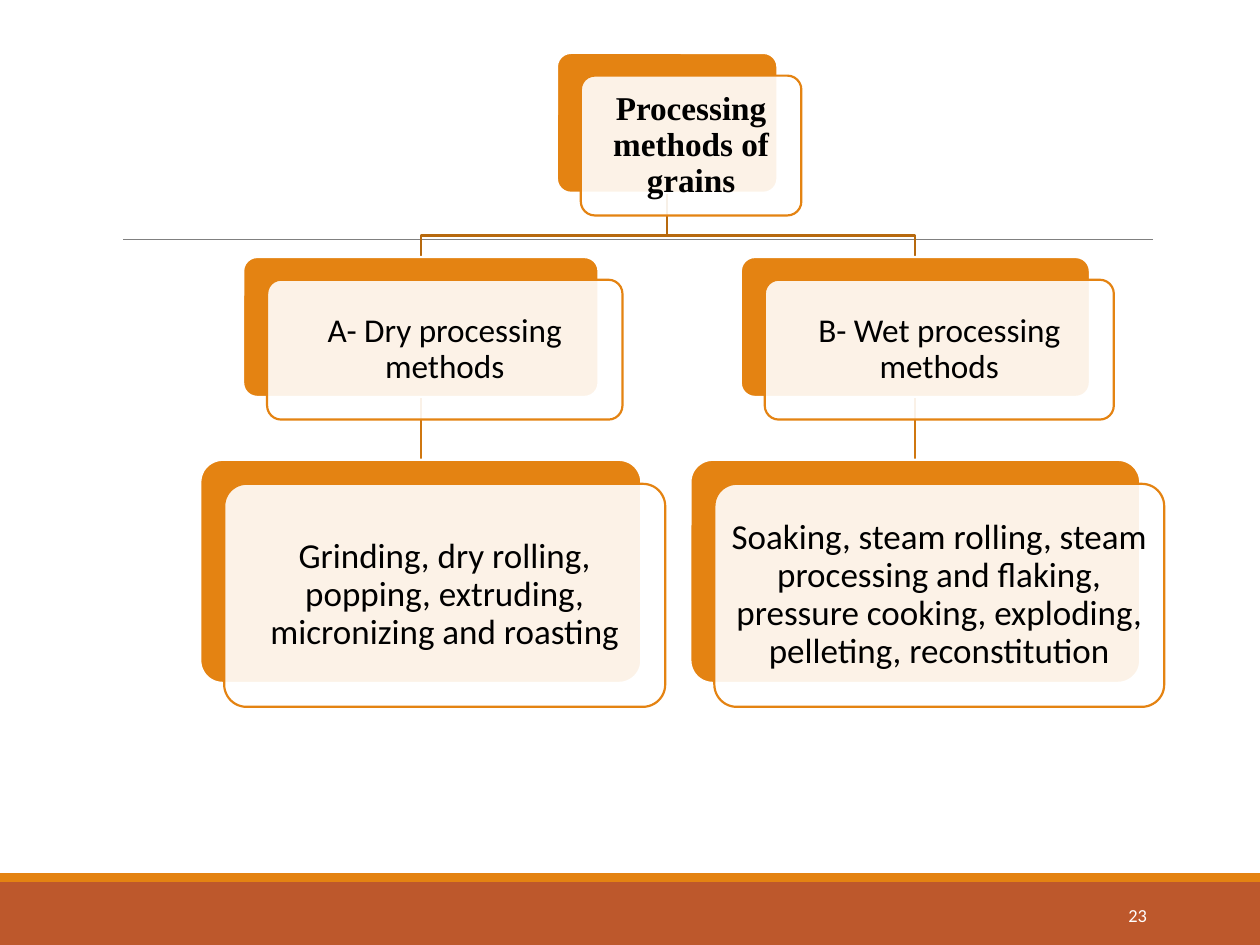
from dataclasses import dataclass

from lxml import etree
from pptx import Presentation
from pptx.dml.color import RGBColor
from pptx.enum.shapes import MSO_CONNECTOR, MSO_SHAPE
from pptx.enum.text import MSO_ANCHOR, PP_ALIGN
from pptx.oxml.ns import qn
from pptx.util import Inches, Pt

RECT, ROUND = MSO_SHAPE.RECTANGLE, MSO_SHAPE.ROUNDED_RECTANGLE
STRAIGHT = MSO_CONNECTOR.STRAIGHT
CENTER, RIGHT = PP_ALIGN.CENTER, PP_ALIGN.RIGHT
MIDDLE = MSO_ANCHOR.MIDDLE
ORANGE, RUST, WHITE, BLACK = "E48312", "BD582C", "FFFFFF", "000000"
TOP, BOTTOM = 0, 2
SHIFT = 0.19


@dataclass
class Card:
    text: str
    left: float
    top: float
    width: float
    height: float = 1.11
    size: float = 19
    font: str = "Calibri"
    bold: bool = False
    drop: float = 0.18

    @property
    def mid(self) -> float:
        return self.left + self.width / 2

    @property
    def base(self) -> float:
        return self.top + self.height


def color(code: str) -> RGBColor:
    return RGBColor.from_string(code)


def stroke(shape, code: str, width: float) -> None:
    shape.line.color.rgb = color(code)
    shape.line.width = Pt(width)


def box(slide, kind, left: float, top: float, width: float, height: float, fill: str):
    shape = slide.shapes.add_shape(kind, Inches(left), Inches(top), Inches(width), Inches(height))
    shape.shadow.inherit = False
    shape.fill.solid()
    shape.fill.fore_color.rgb = color(fill)
    shape.line.fill.background()
    return shape


def write(shape, text: str, *, size: float, font="Calibri", code=BLACK, bold=False,
          align=CENTER, inset=0.1, space=1.0) -> None:
    frame = shape.text_frame
    frame.word_wrap = True
    frame.vertical_anchor = MIDDLE
    frame.margin_left = frame.margin_right = Inches(inset)
    frame.margin_top = frame.margin_bottom = Inches(inset)
    para = frame.paragraphs[0]
    para.alignment = align
    para.line_spacing = space
    run = para.add_run()
    run.text = text
    run.font.size = Pt(size)
    run.font.name = font
    run.font.bold = bold
    run.font.color.rgb = color(code)


def line(slide, start: tuple, end: tuple, code: str, width: float):
    link = slide.shapes.add_connector(STRAIGHT, *map(Inches, start + end))
    stroke(link, code, width)
    etree.SubElement(link._element.spPr, qn("a:effectLst"))
    return link


def branch(slide, root: Card, child: Card) -> None:
    bend = child.top - 0.17
    points = [(root.mid, bend), (child.mid, bend), (child.mid, child.top)]
    path = slide.shapes.build_freeform(Inches(root.mid), Inches(root.base))
    path.add_line_segments([(Inches(x), Inches(y)) for x, y in points], close=False)
    shape = path.convert_to_shape()
    shape.shadow.inherit = False
    shape.fill.background()
    stroke(shape, "B7690E", 1.25)


def draw(slide, card: Card):
    back = box(slide, ROUND, card.left, card.top, card.width, card.height, ORANGE)
    front = box(slide, ROUND, card.left + SHIFT, card.top + card.drop,
                card.width, card.height, WHITE)
    for shape, edge in ((back, WHITE), (front, ORANGE)):
        shape.adjustments[0] = 0.1
        stroke(shape, edge, 1.25)
    tint = front.fill._xPr.find(qn("a:solidFill"))[0]
    etree.SubElement(tint, qn("a:alpha"), val="90000")
    write(front, card.text, size=card.size, font=card.font, bold=card.bold,
          inset=0.07, space=0.9)
    return back


def main() -> None:
    deck = Presentation()
    deck.slide_width, deck.slide_height = Inches(10), Inches(7.5)
    slide = deck.slides.add_slide(deck.slide_layouts[6])

    box(slide, RECT, 0, 7, 10, 0.5, RUST)
    box(slide, RECT, 0, 6.93, 10, 0.07, ORANGE)
    line(slide, (0.98, 1.9), (9.15, 1.9), "808080", 0.5)
    page = slide.shapes.add_textbox(Inches(8.12), Inches(7.06), Inches(1.08), Inches(0.4))
    write(page, "23", size=10.5, code=WHITE, align=RIGHT)

    root = Card("Processing methods of grains", 4.42, 0.42, 1.75,
                font="Times New Roman", bold=True)
    big = {"height": 1.77, "size": 20, "drop": 0.19}
    pairs = [
        (Card("A- Dry processing methods", 1.93, 2.04, 2.82),
         Card("Grinding, dry rolling, popping, extruding, micronizing and roasting",
              1.59, 3.65, 3.5, **big)),
        (Card("B- Wet processing methods", 5.88, 2.04, 2.77),
         Card("Soaking, steam rolling, steam processing and flaking, pressure cooking, "
              "exploding, pelleting, reconstitution", 5.48, 3.65, 3.57, **big)),
    ]

    links = []
    for group, leaf in pairs:
        links.append(line(slide, (group.mid, group.base), (leaf.mid, leaf.top), "CF7710", 1.25))
        branch(slide, root, group)
    draw(slide, root)
    for link, (group, leaf) in zip(links, pairs):
        link.begin_connect(draw(slide, group), BOTTOM)
        link.end_connect(draw(slide, leaf), TOP)

    deck.save("out.pptx")


if __name__ == "__main__":
    main()
